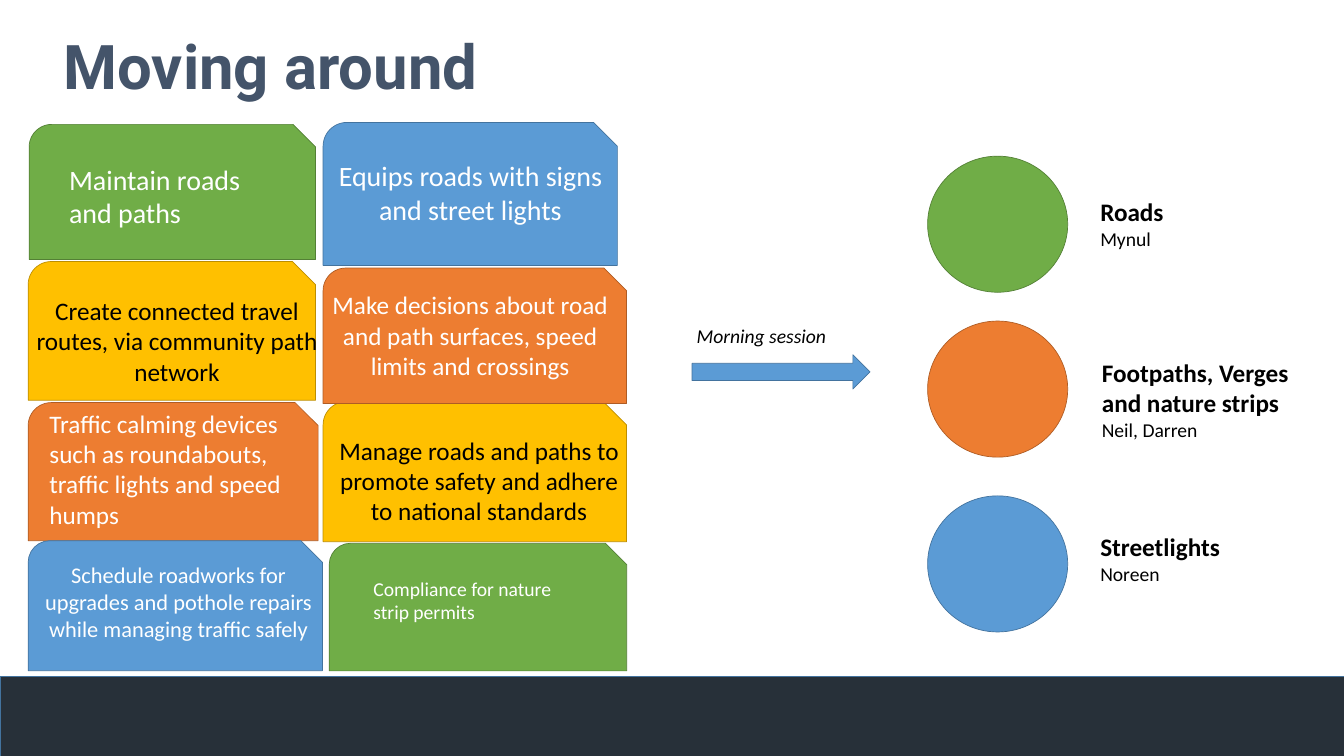
from dataclasses import dataclass
from typing import NamedTuple

from pptx import Presentation
from pptx.dml.color import RGBColor
from pptx.enum.shapes import MSO_SHAPE as Preset
from pptx.enum.text import PP_ALIGN as Align
from pptx.util import Cm, Pt


class Paint(NamedTuple):
    fill: str
    line: str


class Box(NamedTuple):
    left: float
    top: float
    width: float
    height: float


@dataclass(frozen=True)
class Theme:
    green: Paint = Paint("70AD47", "538035")
    blue: Paint = Paint("5B9BD5", "43739E")
    yellow: Paint = Paint("FFC000", "BD8E00")
    orange: Paint = Paint("ED7D31", "AF5C24")
    footer: Paint = Paint("273039", "43739E")
    title: str = "44546A"
    dark: str = "000000"
    light: str = "FFFFFF"
    title_font: str = "Roboto"
    body_font: str = "Calibri"
    title_size: int = 88
    large: int = 40
    medium: int = 36
    small: int = 32
    note: int = 28


THEME = Theme()


@dataclass(frozen=True)
class Card:
    text: str
    box: Box
    text_box: Box
    paint: Paint
    size: int
    color: str = THEME.light
    align: Align = Align.CENTER


@dataclass(frozen=True)
class Topic:
    name: str
    people: str
    paint: Paint
    circle_top: float
    label: Box


# All lengths are in centimetres. Cards are listed from back to front.
CARDS = [
    Card("Maintain roads and paths", Box(1.47, 6.27, 14.43, 6.81),
         Box(3.23, 8.05, 10.8, 3.68), THEME.green, THEME.large, align=Align.LEFT),
    Card("Equips roads with signs and street lights", Box(16.28, 6.17, 14.83, 7.21),
         Box(15.88, 7.87, 15.65, 3.68), THEME.blue, THEME.large),
    Card("Manage roads and paths to promote safety and adhere to national standards",
         Box(16.28, 20.24, 15.29, 7.06), Box(16.28, 21.79, 15.72, 4.88),
         THEME.yellow, THEME.medium, THEME.dark),
    Card("Create connected travel routes, via community path network",
         Box(1.42, 13.18, 14.48, 6.99), Box(0.97, 14.76, 15.9, 4.88),
         THEME.yellow, THEME.medium, THEME.dark),
    Card("Make decisions about road and path surfaces, speed limits and crossings",
         Box(16.28, 13.51, 15.29, 6.83), Box(15.98, 14.48, 15.42, 4.88),
         THEME.orange, THEME.medium),
    Card("Traffic calming devices such as roundabouts, traffic lights and speed humps",
         Box(1.42, 20.29, 14.61, 6.96), Box(2.24, 20.45, 12.75, 6.4),
         THEME.orange, THEME.medium, align=Align.LEFT),
    Card("Schedule roadworks for upgrades and pothole repairs while managing traffic safely",
         Box(1.42, 27.25, 14.83, 6.55), Box(1.47, 28.17, 15.06, 4.37),
         THEME.blue, THEME.small),
    Card("Compliance for nature strip permits", Box(16.59, 27.38, 14.99, 6.43),
         Box(18.57, 28.93, 11.05, 2.64), THEME.green, THEME.note, align=Align.LEFT),
]

TOPICS = [
    Topic("Roads", "Mynul", THEME.green, 7.87, Box(55.19, 9.78, 10.9, 3)),
    Topic("Footpaths, Verges and nature strips", "Neil, Darren", THEME.orange, 16.18,
          Box(55.27, 17.88, 10.9, 4.52)),
    Topic("Streetlights", "Noreen", THEME.blue, 24.99, Box(55.19, 26.67, 9.93, 3)),
]


def add_preset(slide, preset: Preset, box: Box, paint: Paint) -> None:
    shape = slide.shapes.add_shape(preset, *map(Cm, box))
    shape.shadow.inherit = False
    shape.fill.solid()
    shape.fill.fore_color.rgb = RGBColor.from_string(paint.fill)
    shape.line.color.rgb = RGBColor.from_string(paint.line)
    shape.line.width = Pt(1)


def add_paragraph(frame, text: str, *, size: int, color: str = THEME.dark,
                  font: str = THEME.body_font, bold: bool = False,
                  italic: bool = False, align: Align = Align.LEFT) -> None:
    """Fill the frame's empty first paragraph, or append another one."""
    paragraph = frame.add_paragraph() if frame.text else frame.paragraphs[0]
    paragraph.alignment = align
    run = paragraph.add_run()
    run.text = text
    run.font.name = font
    run.font.size = Pt(size)
    run.font.bold = bold
    run.font.italic = italic
    run.font.color.rgb = RGBColor.from_string(color)


def add_frame(slide, box: Box, wrap: bool = True):
    frame = slide.shapes.add_textbox(*map(Cm, box)).text_frame
    frame.word_wrap = wrap
    return frame


def draw_card(slide, card: Card) -> None:
    add_preset(slide, Preset.SNIP_ROUND_RECTANGLE, card.box, card.paint)
    add_paragraph(add_frame(slide, card.text_box), card.text,
                  size=card.size, color=card.color, align=card.align)


def draw_topic(slide, topic: Topic) -> None:
    add_preset(slide, Preset.OVAL, Box(46.74, topic.circle_top, 7.06, 6.86), topic.paint)
    frame = add_frame(slide, topic.label)
    add_paragraph(frame, topic.name, size=THEME.medium, bold=True)
    add_paragraph(frame, topic.people, size=THEME.note)


def main() -> None:
    presentation = Presentation()
    presentation.slide_width = Cm(67.72)
    presentation.slide_height = Cm(38.1)
    slide = presentation.slides.add_slide(presentation.slide_layouts[6])

    # Footer band and title
    add_preset(slide, Preset.RECTANGLE, Box(0, 34.11, 67.72, 3.99), THEME.footer)
    add_paragraph(add_frame(slide, Box(2.16, 1.3, 23.72, 4.01), wrap=False),
                  "Moving around ", size=THEME.title_size, color=THEME.title,
                  font=THEME.title_font, bold=True, align=Align.CENTER)

    # Responsibilities
    for card in CARDS:
        draw_card(slide, card)

    # Session arrow
    add_preset(slide, Preset.RIGHT_ARROW, Box(34.87, 17.88, 8.97, 1.73), THEME.blue)
    add_paragraph(add_frame(slide, Box(34.85, 16.18, 10.49, 1.45)),
                  "Morning session", size=THEME.note, italic=True)

    # Topics and their people
    for topic in TOPICS:
        draw_topic(slide, topic)

    presentation.save("out.pptx")


if __name__ == "__main__":
    main()
